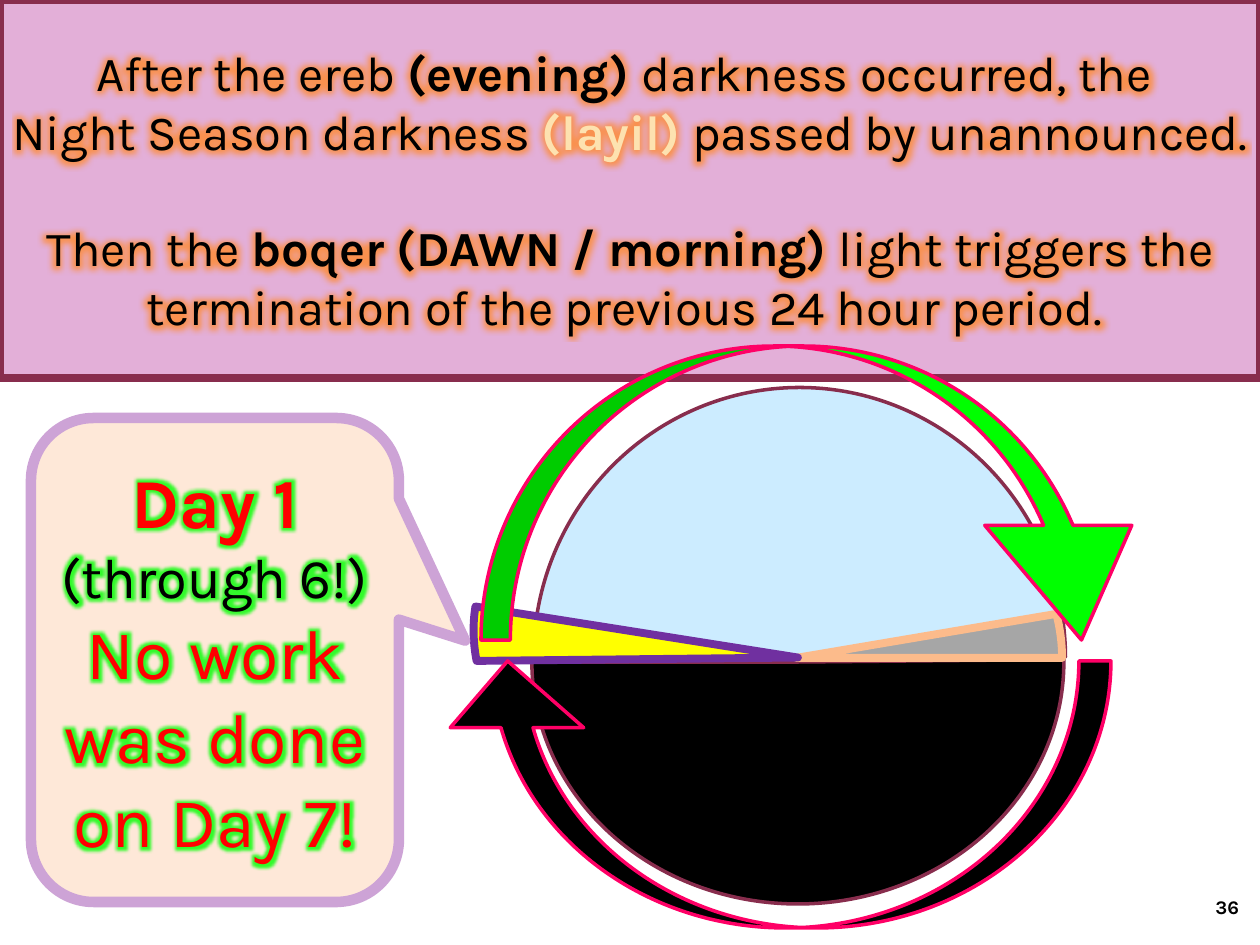
from lxml.etree import SubElement
from pptx import Presentation
from pptx.dml.color import RGBColor
from pptx.enum.shapes import MSO_SHAPE as KIND
from pptx.enum.text import MSO_ANCHOR, PP_ALIGN
from pptx.oxml.ns import qn
from pptx.util import Emu, Pt

SCALE = 914400 / 126
SIZE = (1260, 945)

THEME = {
    "font": "Karla",
    "black": "000000", "red": "FF0000", "cream": "FDE2B0",
    "plum": "882D4D", "pink": "FF0066", "mauve": "E3AFD8",
    "sky": "CCECFF", "grey": "A6A6A6", "peach": "FCBB8B",
    "yellow": "FFFF00", "purple": "7030A0", "green": "00FF00",
    "sand": "FEE8D8", "lilac": "CDA3D6", "orange": "FF8A2D",
    "page": 11, "body": 28, "note": 32, "head": 40,
}

BODY = {"size": "body", "color": "black", "bold": False}
BOLD = {**BODY, "bold": True}
HEAD = {"size": "head", "color": "red", "bold": False}

BANNER = [
    (0, [("After the ereb ", BODY), ("(evening) ", BOLD),
         ("darkness occurred, the ", BODY), None,
         ("Night Season darkness ", BODY),
         ("(layil) ", {**BOLD, "color": "cream"}),
         ("passed by unannounced.", BODY)]),
    (33, [("Then the ", BODY), ("boqer (DAWN / morning) ", BOLD),
          ("light triggers the termination of the previous 24 hour period. ", BODY)]),
]
CALLOUT = [
    (0, [("Day 1 ", {**HEAD, "bold": True}),
         ("(through 6!) ", {**BODY, "size": "note"}),
         ("No work was done on Day 7!", HEAD)]),
]
PAGE = [(0, [("36", {**BOLD, "size": "page"})])]

SHAPES = [
    {"kind": KIND.PIE, "box": (529, 392, 541, 532), "rotation": 90,
     "adj": (54, 161.84), "fill": "sky", "line": ("plum", 2)},
    {"kind": KIND.PIE, "box": (556, 396, 484, 532), "rotation": 270,
     "adj": (53.68, 162), "fill": "black", "line": ("plum", 2)},
    {"kind": KIND.PIE, "box": (582, 392, 428, 532), "rotation": 90,
     "adj": (156.24, 162), "fill": "grey", "line": ("peach", 4.5)},
    {"kind": KIND.RECTANGLE, "box": (0, 0, 1260, 378),
     "fill": "mauve", "line": ("plum", 4.5), "text": BANNER, "glow": "orange"},
    {"kind": KIND.PIE, "box": (576, 331, 444, 653), "rotation": 279,
     "adj": (156.24, 162), "fill": "yellow", "line": ("purple", 4.5)},
    {"kind": KIND.CURVED_DOWN_ARROW, "box": (481, 346, 674, 294),
     "adj": (0.1, 0.5, 0.39), "fill": "green", "line": ("pink", 2)},
    {"kind": KIND.CURVED_UP_ARROW, "box": (441, 661, 670, 267), "flip": True,
     "adj": (0.12, 0.5, 0.25), "fill": "black", "line": ("pink", 2)},
    {"kind": KIND.ROUNDED_RECTANGULAR_CALLOUT, "box": (31, 418, 368, 484),
     "adj": (0.68, -0.04, 0.17), "fill": "sand", "line": ("lilac", 6),
     "text": CALLOUT, "glow": "green"},
]


def px(box):
    return [Emu(round(n * SCALE)) for n in box]


def hue(name):
    return RGBColor.from_string(THEME[name])


def shine(run, name):
    fill = run.font._element.find(qn("a:solidFill"))
    list_ = SubElement(run.font._element, qn("a:effectLst"))
    glow = SubElement(list_, qn("a:glow"), rad="101600")
    tint = SubElement(glow, qn("a:srgbClr"), val=THEME[name])
    SubElement(tint, qn("a:alpha"), val="80000")
    fill.addnext(list_)


def write(frame, paras, align, anchor, glow=None):
    frame.word_wrap = True
    frame.vertical_anchor = anchor
    for i, (gap, runs) in enumerate(paras):
        para = frame.add_paragraph() if i else frame.paragraphs[0]
        para.alignment = align
        if gap:
            para.space_before = Pt(gap)
        for part in runs:
            if part is None:
                para.add_line_break()
                continue
            run = para.add_run()
            run.text, look = part
            form = {"name": THEME["font"], "size": Pt(THEME[look["size"]]),
                    "bold": look["bold"]}
            for key, val in form.items():
                setattr(run.font, key, val)
            run.font.color.rgb = hue(look["color"])
            if glow:
                shine(run, glow)


def draw(slide, item):
    shape = slide.shapes.add_shape(item["kind"], *px(item["box"]))
    shape.shadow.inherit = False
    shape.rotation = item.get("rotation", 0)
    for i, val in enumerate(item.get("adj", ())):
        shape.adjustments[i] = val
    if item.get("flip"):
        shape._element.spPr.xfrm.set("flipH", "1")
    shape.fill.solid()
    shape.fill.fore_color.rgb = hue(item["fill"])
    color, width = item["line"]
    shape.line.color.rgb = hue(color)
    shape.line.width = Pt(width)
    if "text" in item:
        write(shape.text_frame, item["text"], PP_ALIGN.CENTER,
              MSO_ANCHOR.MIDDLE, item["glow"])


def main():
    deck = Presentation()
    deck.slide_width, deck.slide_height = px(SIZE)
    slide = deck.slides.add_slide(deck.slide_layouts[6])
    frame = slide.shapes.add_textbox(*px((1158, 887, 81, 31))).text_frame
    for side in ("left", "top", "right", "bottom"):
        setattr(frame, "margin_" + side, 0)
    write(frame, PAGE, PP_ALIGN.RIGHT, MSO_ANCHOR.BOTTOM)
    for item in SHAPES:
        draw(slide, item)
    deck.save("out.pptx")


if __name__ == "__main__":
    main()
